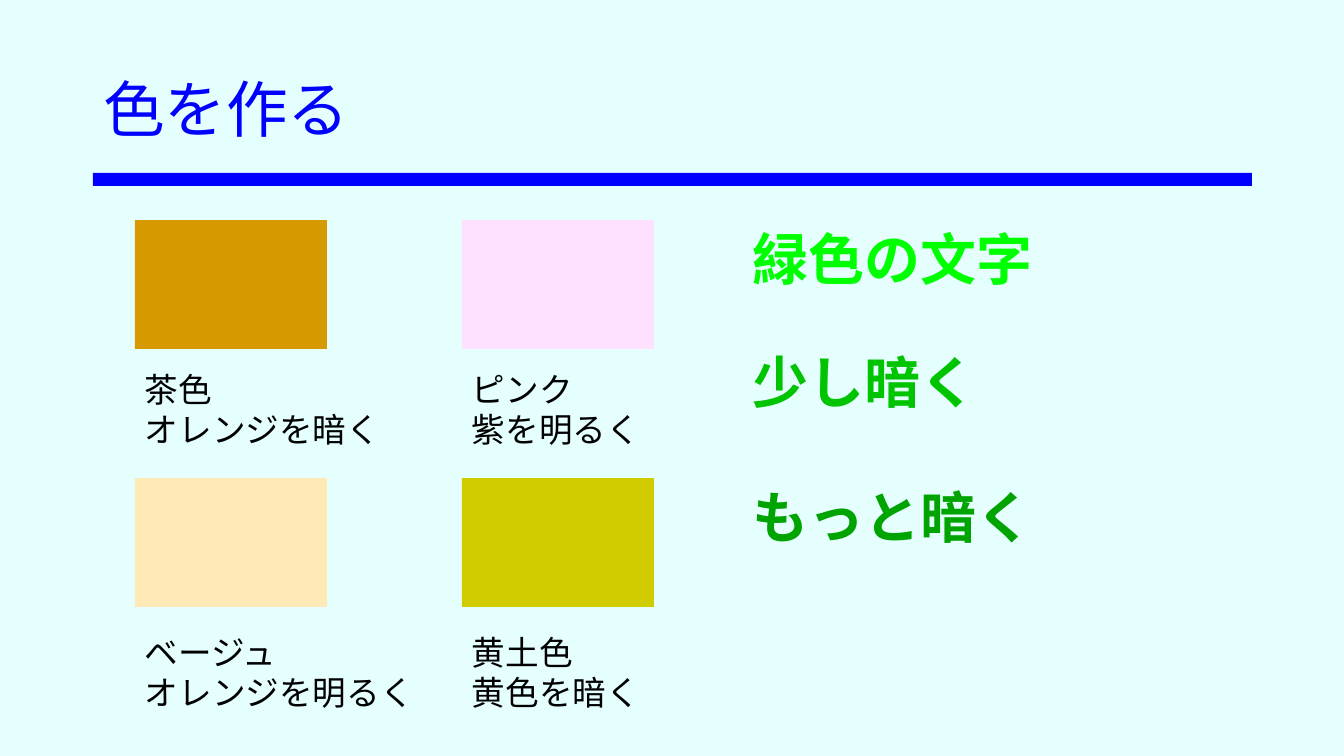
from lxml.etree import SubElement
from pptx import Presentation
from pptx.dml.color import RGBColor
from pptx.enum.shapes import MSO_SHAPE
from pptx.enum.text import MSO_ANCHOR, MSO_AUTO_SIZE, PP_ALIGN
from pptx.oxml.ns import qn
from pptx.util import Pt

BACKGROUND = RGBColor(0xE5, 0xFF, 0xFF)
BLUE = RGBColor(0x00, 0x00, 0xFF)
BLACK = RGBColor(0x00, 0x00, 0x00)
BROWN = RGBColor(0xD6, 0x99, 0x00)
PINK = RGBColor(0xFF, 0xE1, 0xFF)
BEIGE = RGBColor(0xFF, 0xEA, 0xB7)
OCHRE = RGBColor(0xD1, 0xCC, 0x00)
GREEN = RGBColor(0x00, 0xFF, 0x00)
DARKER_GREEN = RGBColor(0x00, 0xC4, 0x00)
DARKEST_GREEN = RGBColor(0x00, 0xA4, 0x00)

FONT = "Noto Sans CJK JP"
TITLE = "色を作る"
SWATCH_ROWS = [
    [(BROWN, ["茶色", "オレンジを暗く"]), (PINK, ["ピンク", "紫を明るく"])],
    [(BEIGE, ["ベージュ", "オレンジを明るく"]), (OCHRE, ["黄土色", "黄色を暗く"])],
]
GREENS = [
    ("緑色の文字", GREEN, 220),
    ("少し暗く", DARKER_GREEN, 343),
    ("もっと暗く", DARKEST_GREEN, 478),
]

# Lengths in px
SLIDE_W, SLIDE_H = 1344, 756
COLUMN_LEFTS = [135, 462]
ROW_TOPS = [(220, 364), (478, 627)]  # swatch, caption
SWATCH_W, SWATCH_H = 192, 129
GREEN_LEFT = 743
TEXT_PADDING = 23


def px(length):
    return round(length * 914400 / 100.8)


def format_paragraph(paragraph, size, color, bold=False):
    """Set the font for both Latin and East Asian characters."""
    paragraph.alignment = PP_ALIGN.LEFT
    font = paragraph.font
    font.size, font.bold, font.name = Pt(size), bold, FONT
    font.color.rgb = color
    properties = paragraph._p.pPr.find(qn("a:defRPr"))
    SubElement(properties, qn("a:ea"), typeface=FONT)


def add_rectangle(slide, left, top, width, height, color):
    rectangle = slide.shapes.add_shape(
        MSO_SHAPE.RECTANGLE, px(left), px(top), px(width), px(height))
    rectangle.shadow.inherit = False
    rectangle.fill.solid()
    rectangle.fill.fore_color.rgb = color
    rectangle.line.fill.background()


def add_label(slide, left, top, height, lines, size, color, bold=False):
    """Add an unwrapped text box as wide as its longest line of full-width characters."""
    width = max(map(len, lines)) * size * 1.4 + TEXT_PADDING
    frame = slide.shapes.add_textbox(px(left), px(top), px(width), px(height)).text_frame
    frame.word_wrap = False
    frame.auto_size = MSO_AUTO_SIZE.SHAPE_TO_FIT_TEXT
    frame.text = "\n".join(lines)
    for paragraph in frame.paragraphs:
        format_paragraph(paragraph, size, color, bold)


def add_title(slide):
    title = slide.shapes.title
    title.left, title.top, title.width, title.height = map(px, (93, 40, 1159, 146))
    frame = title.text_frame
    frame.text = TITLE
    frame.vertical_anchor = MSO_ANCHOR.MIDDLE
    frame.auto_size = MSO_AUTO_SIZE.NONE
    paragraph = frame.paragraphs[0]
    paragraph.line_spacing = 0.9
    format_paragraph(paragraph, 44, BLUE)


def main():
    presentation = Presentation()
    presentation.slide_width, presentation.slide_height = px(SLIDE_W), px(SLIDE_H)
    slide = presentation.slides.add_slide(presentation.slide_layouts[5])
    slide.background.fill.solid()
    slide.background.fill.fore_color.rgb = BACKGROUND

    add_title(slide)
    add_rectangle(slide, 93, 173, 1159, 13, BLUE)
    for swatches, (swatch_top, caption_top) in zip(SWATCH_ROWS, ROW_TOPS):
        for (color, caption), left in zip(swatches, COLUMN_LEFTS):
            add_rectangle(slide, left, swatch_top, SWATCH_W, SWATCH_H, color)
            add_label(slide, left, caption_top, 92, caption, 24, BLACK)
    for text, color, top in GREENS:
        add_label(slide, GREEN_LEFT, top, 78, [text], 40, color, bold=True)

    presentation.save("out.pptx")


if __name__ == "__main__":
    main()
